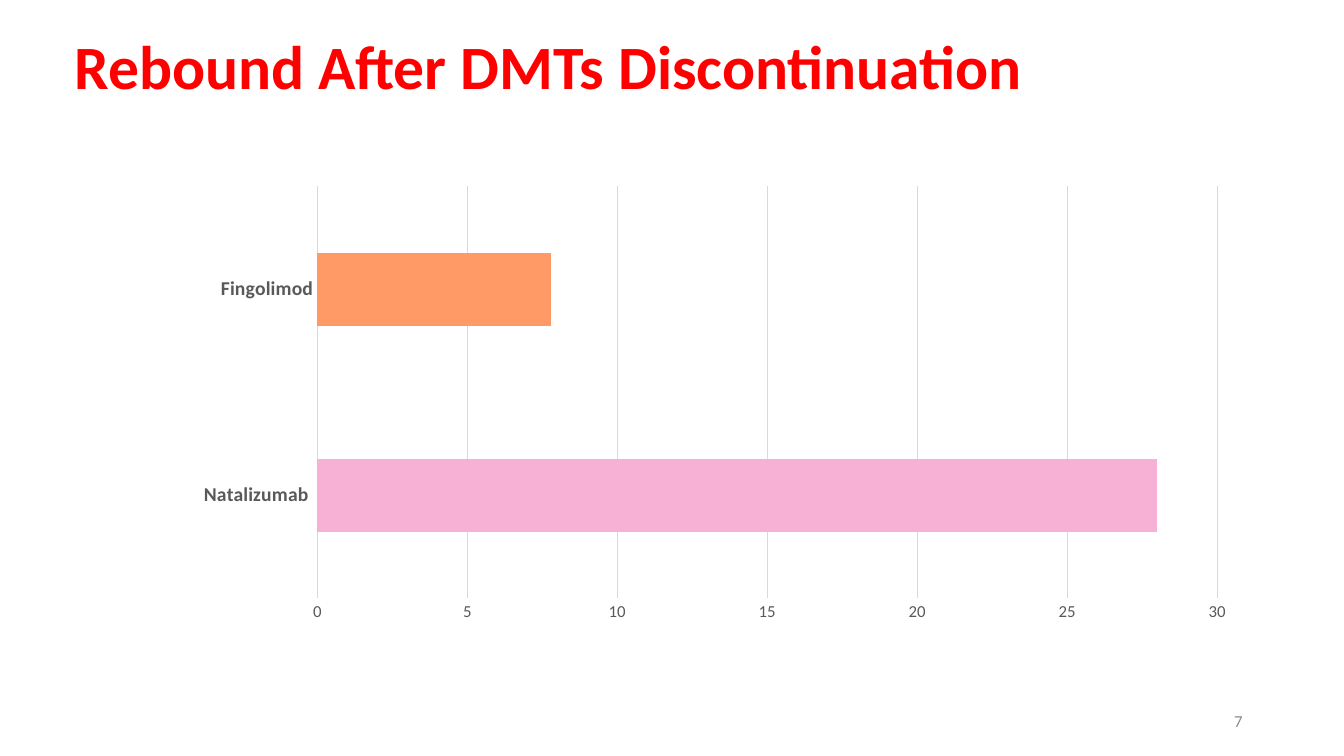
from dataclasses import dataclass

from lxml.etree import SubElement
from pptx import Presentation
from pptx.chart.chart import Chart
from pptx.chart.data import CategoryChartData
from pptx.dml.color import RGBColor
from pptx.enum.chart import XL_CHART_TYPE, XL_TICK_MARK
from pptx.enum.text import MSO_ANCHOR, PP_ALIGN
from pptx.oxml.ns import qn
from pptx.slide import Slide
from pptx.text.text import Font
from pptx.util import Emu, Inches, Pt

WIDTH, HEIGHT = Inches(13.33), Inches(7.5)
FONT = "Calibri"
COLORS = {
    "title": "FF0000",
    "page": "8C8C8C",
    "label": "595959",
    "grid": "D9D9D9",
    "natalizumab": "F7B1D5",
    "fingolimod": "FF9966",
}
PLOT_SHARES = {"x": 0.204, "y": 0.1, "w": 0.767, "h": 0.811}


@dataclass(frozen=True)
class Area:
    """A rectangle in shares of the slide's width and height."""

    left: float
    top: float
    width: float
    height: float

    def box(self) -> tuple[Emu, Emu, Emu, Emu]:
        """Return the rectangle as lengths on the slide."""
        return (
            Emu(round(self.left * WIDTH)),
            Emu(round(self.top * HEIGHT)),
            Emu(round(self.width * WIDTH)),
            Emu(round(self.height * HEIGHT)),
        )


@dataclass(frozen=True)
class Caption:
    """A single line of text with its place and look."""

    text: str
    area: Area
    size: int
    color: str
    bold: bool = False
    align: PP_ALIGN = PP_ALIGN.LEFT
    line_spacing: float = 1.0


@dataclass(frozen=True)
class Therapy:
    """A discontinued therapy and its rebound rate."""

    name: str
    rebound: float
    color: str


CAPTIONS = [
    Caption("Rebound After DMTs Discontinuation", Area(0.048, 0.005, 0.905, 0.173),
            44, "title", bold=True, line_spacing=0.9),
    Caption("7", Area(0.707, 0.927, 0.225, 0.053), 12, "page", align=PP_ALIGN.RIGHT),
]
THERAPIES = [
    Therapy("Natalizumab ", 28, "natalizumab"),
    Therapy("Fingolimod", 7.8, "fingolimod"),
]
CHART_AREA = Area(0.058, 0.179, 0.873, 0.672)


def rgb(name: str) -> RGBColor:
    """Look up a named colour."""
    return RGBColor.from_string(COLORS[name])


def style_font(font: Font, size: int, color: str, bold: bool = False) -> None:
    """Set typeface, size, colour and weight."""
    font.name, font.size, font.bold = FONT, Pt(size), bold
    font.color.rgb = rgb(color)


def add_caption(slide: Slide, caption: Caption) -> None:
    """Place a vertically centred line of text."""
    frame = slide.shapes.add_textbox(*caption.area.box()).text_frame
    frame.word_wrap = True
    frame.vertical_anchor = MSO_ANCHOR.MIDDLE
    paragraph = frame.paragraphs[0]
    paragraph.text = caption.text
    paragraph.alignment = caption.align
    paragraph.line_spacing = caption.line_spacing
    style_font(paragraph.font, caption.size, caption.color, caption.bold)


def fix_plot_area(chart: Chart) -> None:
    """Pin the inner plot area to its shares of the chart."""
    plot_area = chart._chartSpace.chart.plotArea
    layout = plot_area.find(qn("c:layout"))
    if layout is None:
        layout = SubElement(plot_area, qn("c:layout"))
        plot_area.insert(0, layout)
    manual = SubElement(layout, qn("c:manualLayout"))
    settings = {"layoutTarget": "inner", "xMode": "edge", "yMode": "edge", **PLOT_SHARES}
    for tag, value in settings.items():
        SubElement(manual, qn(f"c:{tag}")).set("val", str(value))


def add_rebound_chart(slide: Slide, therapies: list[Therapy]) -> None:
    """Draw the rebound rates as horizontal bars."""
    rates = CategoryChartData()
    rates.categories = [therapy.name for therapy in therapies]
    rates.add_series("Series 1", [therapy.rebound for therapy in therapies])
    chart = slide.shapes.add_chart(
        XL_CHART_TYPE.BAR_CLUSTERED, *CHART_AREA.box(), rates
    ).chart
    chart.has_legend = chart.has_title = False
    chart.font.name, chart.font.size = FONT, Pt(10)

    bars = chart.plots[0]
    bars.gap_width, bars.vary_by_categories = 182, False
    for index, therapy in enumerate(therapies):
        fill = bars.series[0].points[index].format.fill
        fill.solid()
        fill.fore_color.rgb = rgb(therapy.color)

    names, scale = chart.category_axis, chart.value_axis
    for axis in (names, scale):
        axis.major_tick_mark = axis.minor_tick_mark = XL_TICK_MARK.NONE
    style_font(names.tick_labels.font, 14, "label", bold=True)
    style_font(scale.tick_labels.font, 12, "label")
    scale.minimum_scale, scale.maximum_scale, scale.major_unit = 0, 30, 5
    scale.has_major_gridlines = True
    scale.format.line.fill.background()
    for line in (names.format.line, scale.major_gridlines.format.line):
        line.color.rgb = rgb("grid")
        line.width = Pt(0.75)
    fix_plot_area(chart)


def main() -> None:
    """Build and save the slide."""
    deck = Presentation()
    deck.slide_width, deck.slide_height = WIDTH, HEIGHT
    slide = deck.slides.add_slide(deck.slide_layouts[6])
    for caption in CAPTIONS:
        add_caption(slide, caption)
    add_rebound_chart(slide, THERAPIES)
    deck.save("out.pptx")


if __name__ == "__main__":
    main()
